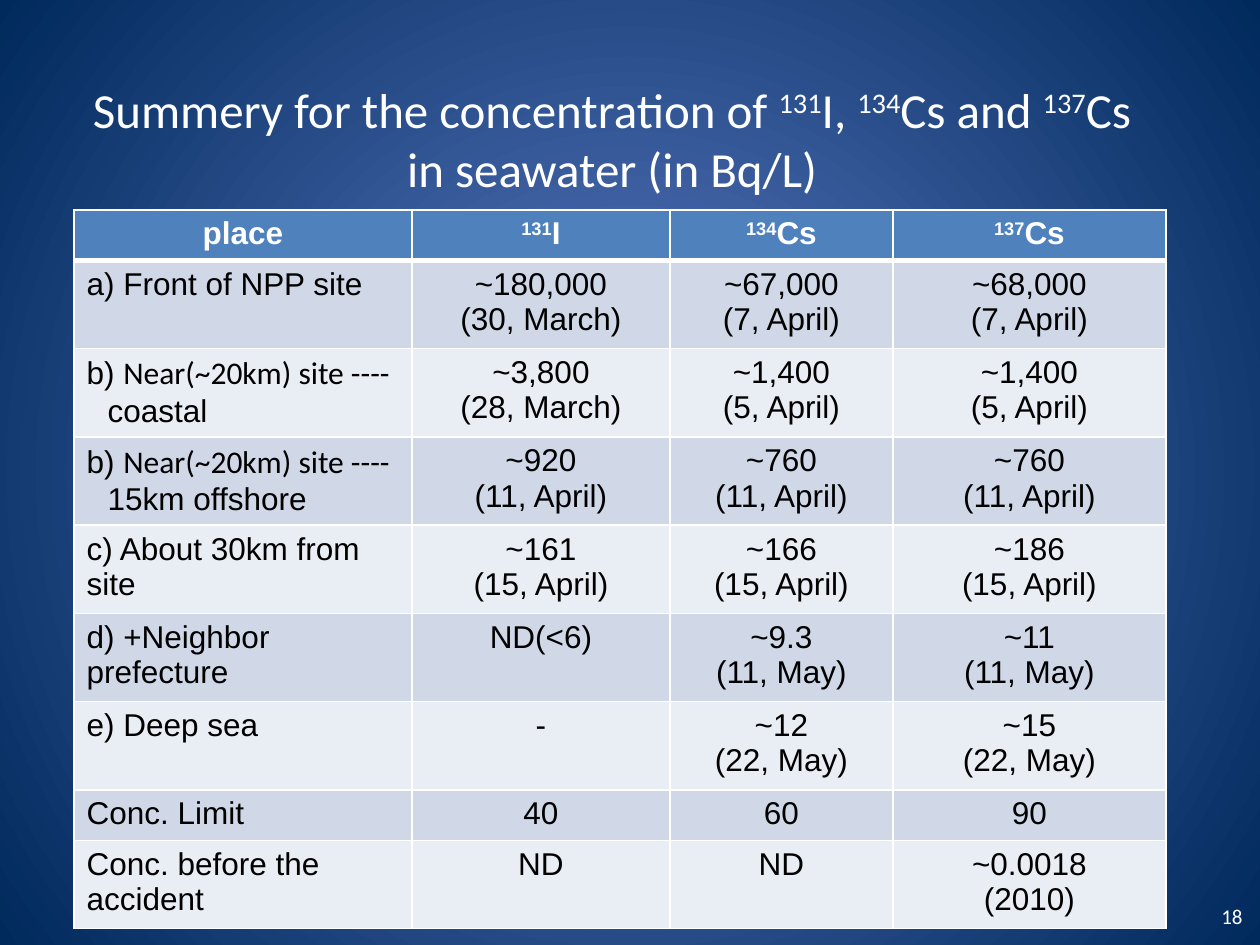
from dataclasses import dataclass

from lxml.etree import SubElement
from pptx import Presentation
from pptx.dml.color import RGBColor
from pptx.enum.text import MSO_ANCHOR as Anchor, MSO_AUTO_SIZE as AutoSize, PP_ALIGN as Align
from pptx.oxml.ns import qn
from pptx.util import Emu, Pt

PX = 914400 // 126
SUPERSCRIPT_MARK = "^"
HEADING_FONT_MARK = "|"


def px(length):
    return Emu(length * PX)


@dataclass(frozen=True)
class Theme:
    glow: str = "5E7CC5"
    navy: str = "00295C"
    white: str = "FFFFFF"
    black: str = "000000"
    header: str = "4F81BD"
    bands: tuple = ("D0D8E8", "E9EDF4")
    heading_font: str = "Calibri"
    table_font: str = "Arial"
    title_size: int = 28
    table_size: int = 18
    number_size: int = 12
    thin: int = 1
    thick: int = 3


class SlideBuilder:
    def __init__(self, slide, theme):
        self.slide = slide
        self.theme = theme

    def background(self):
        fill = self.slide.background.fill
        fill.gradient()
        for stop, color in zip(fill.gradient_stops, (self.theme.glow, self.theme.navy)):
            stop.color.rgb = RGBColor.from_string(color)
        gradient = self.slide.background._cSld.find(".//" + qn("a:gradFill"))
        gradient.remove(gradient.find(qn("a:lin")))
        circle = SubElement(gradient, qn("a:path"), path="circle")
        SubElement(circle, qn("a:fillToRect"), l="50000", t="50000", r="50000", b="50000")

    def paragraphs(self, frame, lines, font, size, color, align, bold=False, indent=0):
        for index, line in enumerate(lines):
            paragraph = frame.paragraphs[0] if index == 0 else frame.add_paragraph()
            paragraph.alignment = align
            paragraph.font.name = font
            paragraph.font.size = Pt(size)
            paragraph.font.bold = bold
            paragraph.font.color.rgb = RGBColor.from_string(color)
            if index and indent:
                paragraph._p.get_or_add_pPr().set("marL", str(px(indent)))
            for part, section in enumerate(line.split(HEADING_FONT_MARK)):
                for piece, text in enumerate(section.split(SUPERSCRIPT_MARK)):
                    if not text:
                        continue
                    run = paragraph.add_run()
                    run.text = text
                    if part % 2:
                        run.font.name = self.theme.heading_font
                    if piece % 2:
                        run.font._element.set("baseline", "30000")

    def text(self, box, lines, size, align, anchor=Anchor.TOP, wrap=True, grow=False):
        shape = self.slide.shapes.add_textbox(*map(px, box))
        frame = shape.text_frame
        frame.word_wrap = wrap
        frame.vertical_anchor = anchor
        if grow:
            frame.auto_size = AutoSize.SHAPE_TO_FIT_TEXT
        self.paragraphs(frame, lines, self.theme.heading_font, size, self.theme.white, align)

    def borders(self, cell, top, bottom):
        properties = cell._tc.get_or_add_tcPr()
        thin = self.theme.thin
        for side, width in (("L", thin), ("R", thin), ("T", top), ("B", bottom)):
            line = SubElement(properties, qn(f"a:ln{side}"), w=str(Pt(width)))
            fill = SubElement(line, qn("a:solidFill"))
            SubElement(fill, qn("a:srgbClr"), val=self.theme.white)

    def table(self, left, top, widths, heights, rows):
        theme = self.theme
        box = map(px, (left, top, sum(widths), sum(heights)))
        table = self.slide.shapes.add_table(len(rows), len(widths), *box).table
        for column, width in zip(table.columns, widths):
            column.width = px(width)
        for row, height in zip(table.rows, heights):
            row.height = px(height)
        for r, values in enumerate(rows):
            header = r == 0
            color = theme.header if header else theme.bands[(r - 1) % 2]
            for c, value in enumerate(values):
                cell = table.cell(r, c)
                self.borders(cell, theme.thick if r == 1 else theme.thin,
                             theme.thick if header else theme.thin)
                cell.fill.solid()
                cell.fill.fore_color.rgb = RGBColor.from_string(color)
                self.paragraphs(cell.text_frame, value.split("\n"), theme.table_font,
                                theme.table_size, theme.white if header else theme.black,
                                Align.CENTER if header or c else Align.LEFT,
                                bold=header, indent=0 if c else 21)


ROWS = [
    ("place", "^131^I", "^134^Cs", "^137^Cs"),
    ("a) Front of NPP site", "~180,000\n(30, March)", "~67,000\n(7, April)", "~68,000\n(7, April)"),
    ("b) |Near(~20km) site ----|\ncoastal", "~3,800\n(28, March)", "~1,400\n(5, April)", "~1,400\n(5, April)"),
    ("b) |Near(~20km) site ----|\n15km offshore", "~920\n(11, April)", "~760\n(11, April)", "~760\n(11, April)"),
    ("c) About 30km from site", "~161\n(15, April)", "~166\n(15, April)", "~186\n(15, April)"),
    ("d) +Neighbor prefecture", "ND(<6)", "~9.3\n(11, May)", "~11\n(11, May)"),
    ("e) Deep sea", "-", "~12\n(22, May)", "~15\n(22, May)"),
    ("Conc. Limit", "40", "60", "90"),
    ("Conc. before the accident", "ND", "ND", "~0.0018\n(2010)"),
]
TITLE = [
    "Summery for the concentration of ^131^I, ^134^Cs and ^137^Cs",
    "in seawater (in Bq/L)",
]


def main():
    presentation = Presentation()
    presentation.slide_width, presentation.slide_height = px(1260), px(945)
    theme = Theme()
    builder = SlideBuilder(presentation.slides.add_slide(presentation.slide_layouts[6]), theme)
    builder.background()
    builder.text((64, 73, 1096, 131), TITLE, theme.title_size, Align.CENTER, wrap=False, grow=True)
    builder.table(74, 210, (338, 258, 223, 273), (50, *[88] * 6, 50, 88), ROWS)
    builder.text((961, 891, 294, 50), ["18"], theme.number_size, Align.RIGHT, Anchor.MIDDLE)
    presentation.save("out.pptx")


if __name__ == "__main__":
    main()
